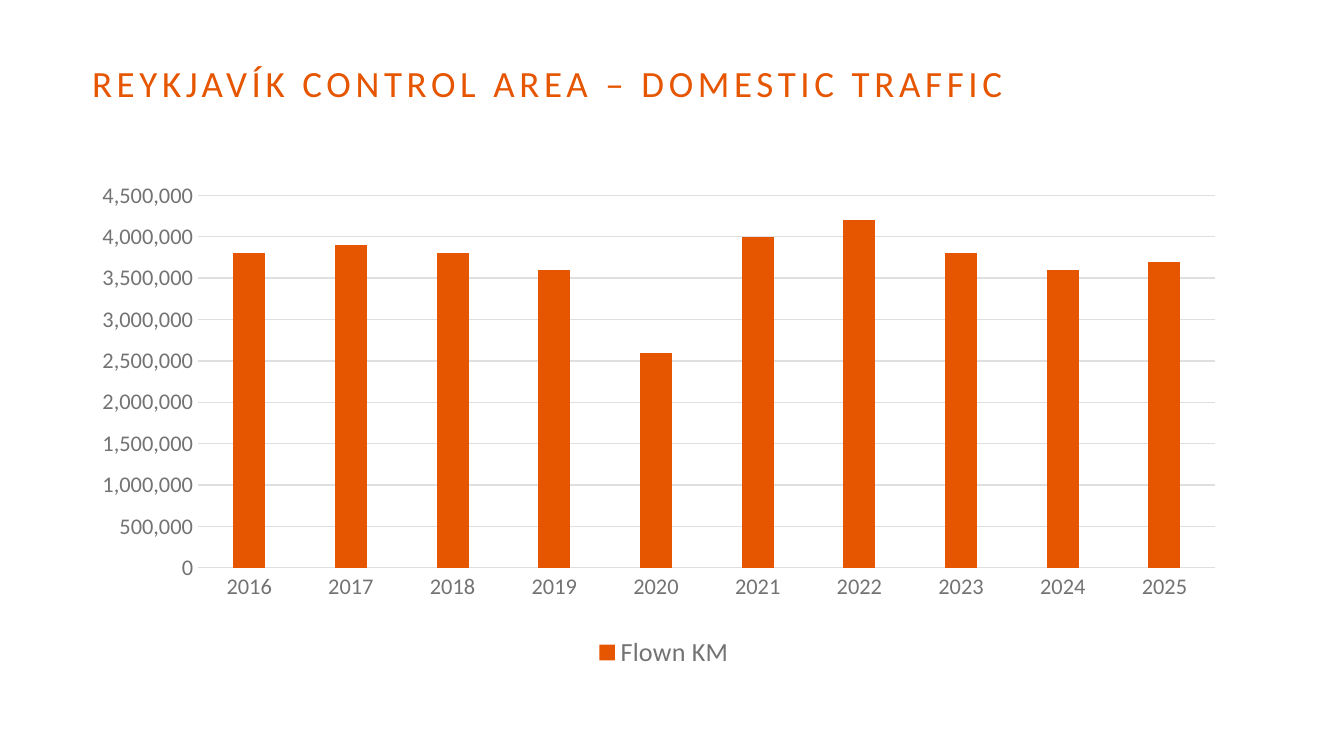
from lxml.etree import SubElement
from pptx import Presentation
from pptx.chart.data import CategoryChartData
from pptx.dml.color import RGBColor
from pptx.enum.chart import XL_CHART_TYPE, XL_LEGEND_POSITION, XL_TICK_MARK
from pptx.enum.text import MSO_ANCHOR
from pptx.oxml.ns import qn
from pptx.util import Pt

EMU_PER_PX = 914400 / 134.4
FONT = "Calibri"
ORANGE = "E65500"
GRAY = "737373"
DARK = "272727"
GRID = "DFDFDF"

FLOWN_KM = {
    "2016": 3800000,
    "2017": 3900000,
    "2018": 3800000,
    "2019": 3600000,
    "2020": 2600000,
    "2021": 4000000,
    "2022": 4200000,
    "2023": 3800000,
    "2024": 3600000,
    "2025": 3700000,
}


def px(*lengths):
    return [round(length * EMU_PER_PX) for length in lengths]


def color(value):
    return RGBColor.from_string(value)


def apply(target, values):
    for name, value in values.items():
        setattr(target, name, value)


def style_font(font, size, shade):
    apply(font, {"name": FONT, "size": Pt(size), "bold": False})
    font.color.rgb = color(shade)


def style_line(line, shade):
    line.color.rgb = color(shade)
    line.width = Pt(0.75)


def add_title(page, text, bounds):
    box = page.shapes.add_textbox(*px(*bounds))
    apply(box.text_frame, {
        "word_wrap": True,
        "vertical_anchor": MSO_ANCHOR.MIDDLE,
        "margin_left": 0,
        "margin_right": 0,
        "margin_top": 0,
        "margin_bottom": 0,
    })
    para = box.text_frame.paragraphs[0]
    para.line_spacing = Pt(26)
    span = para.add_run()
    span.text = text
    style_font(span.font, 19.8, ORANGE)
    span._r.get_or_add_rPr().set("spc", "250")


def set_plot_layout(chart, x, y, w, h):
    plot_area = chart._chartSpace.chart.plotArea
    for old in plot_area.findall(qn("c:layout")):
        plot_area.remove(old)
    layout = SubElement(plot_area, qn("c:layout"))
    plot_area.insert(0, layout)
    manual = SubElement(layout, qn("c:manualLayout"))
    settings = {"layoutTarget": "inner", "xMode": "edge", "yMode": "edge",
                "x": x, "y": y, "w": w, "h": h}
    for name, value in settings.items():
        SubElement(manual, qn(f"c:{name}")).set("val", str(value))


def style_axes(chart):
    for axis in (chart.category_axis, chart.value_axis):
        apply(axis, {"major_tick_mark": XL_TICK_MARK.NONE,
                     "minor_tick_mark": XL_TICK_MARK.NONE})
        style_font(axis.tick_labels.font, 12, GRAY)
    style_line(chart.category_axis.format.line, GRID)
    value_axis = chart.value_axis
    apply(value_axis, {"minimum_scale": 0, "maximum_scale": 4500000,
                       "major_unit": 500000, "has_major_gridlines": True})
    value_axis.format.line.fill.background()
    style_line(value_axis.major_gridlines.format.line, GRID)
    apply(value_axis.tick_labels, {"number_format": "#,##0",
                                   "number_format_is_linked": False})


def add_column_chart(page, name, values, bounds):
    data = CategoryChartData(number_format="#,##0")
    data.categories = values.keys()
    data.add_series(name, values.values())
    chart = page.shapes.add_chart(
        XL_CHART_TYPE.COLUMN_STACKED, *px(*bounds), data).chart
    apply(chart, {"has_title": False, "has_legend": True})
    style_font(chart.font, 10, DARK)
    plot = chart.plots[0]
    apply(plot, {"gap_width": 219, "overlap": 100,
                 "vary_by_categories": False})
    fill = plot.series[0].format.fill
    fill.solid()
    fill.fore_color.rgb = color(ORANGE)
    style_axes(chart)
    apply(chart.legend, {"position": XL_LEGEND_POSITION.BOTTOM,
                         "include_in_layout": False})
    style_font(chart.legend.font, 14, GRAY)
    set_plot_layout(chart, 0.093, 0.039, 0.889, 0.748)


def main():
    deck = Presentation()
    deck.slide_width, deck.slide_height = px(1344, 756)
    page = deck.slides.add_slide(deck.slide_layouts[6])
    add_title(page, "REYKJAVÍK CONTROL AREA – DOMESTIC TRAFFIC",
              (92, 36, 974, 90))
    add_column_chart(page, "Flown KM", FLOWN_KM, (92, 176, 1144, 498))
    deck.save("out.pptx")


if __name__ == "__main__":
    main()
